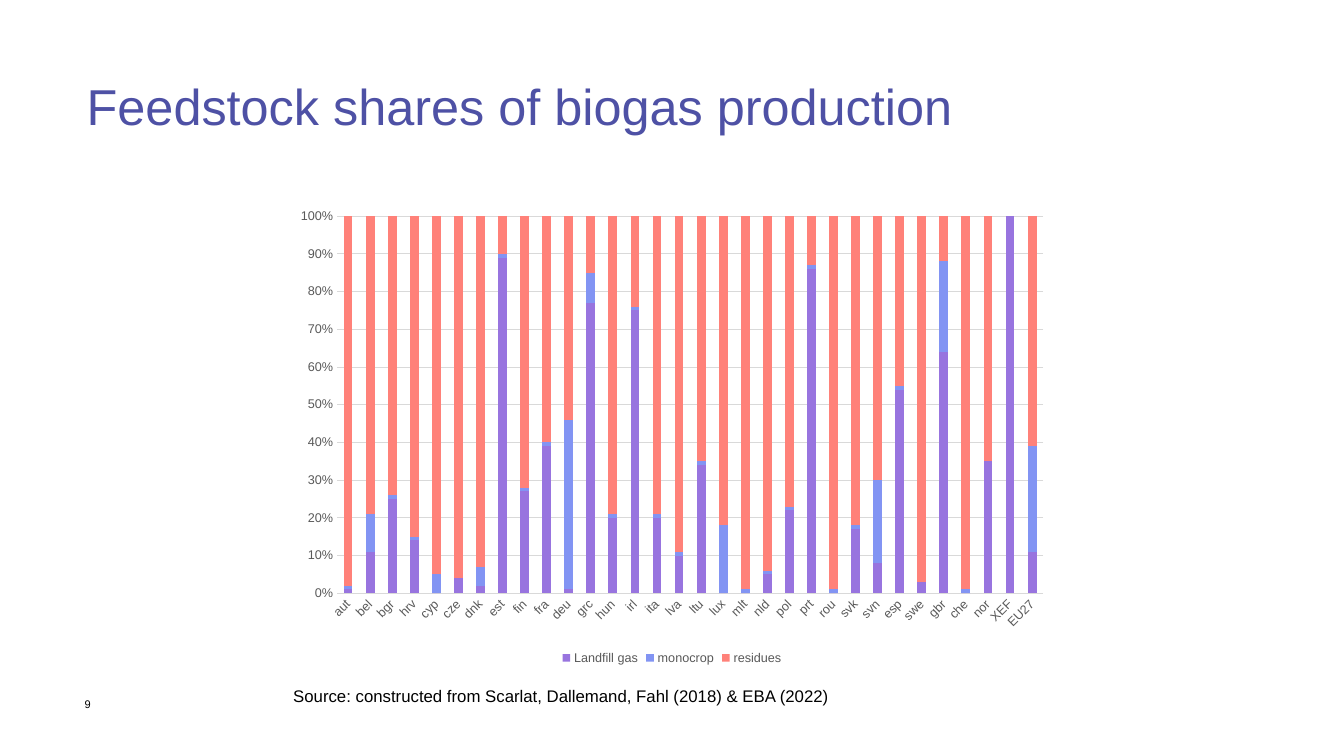
from dataclasses import dataclass

from pptx import Presentation
from pptx import util as u
from pptx.chart.data import CategoryChartData
from pptx.dml.color import RGBColor
from pptx.enum import chart as charts, text


@dataclass(frozen=True)
class Theme:
    """Colours and type sizes of the slide."""
    font: str = "Arial"
    title: str = "4E51A5"
    ink: str = "000000"
    label: str = "595959"
    rule: str = "D9D9D9"
    title_size: float = 36
    source_size: float = 12
    chart_size: float = 10
    label_size: float = 9
    number_size: float = 7.9
    rule_width: float = 0.75


THEME = Theme()
WIDTH, HEIGHT = 13.33, 7.5
TITLE_BOX = (0.86, 0.63, 11.6, 0.86)
CHART_BOX = (2.83, 1.98, 7.67, 4.66)
SOURCE_BOX = (2.81, 6.65, 5.56, 0.37)
NUMBER_BOX = (0.74, 6.87, 0.45, 0.26)

COUNTRIES = (
    "aut bel bgr hrv cyp cze dnk est fin fra deu grc hun irl ita lva "
    "ltu lux mlt nld pol prt rou svk svn esp swe gbr che nor XEF EU27"
).split()
FEEDSTOCKS = {
    "Landfill gas": ("9874DF", (
        1, 11, 25, 14, 0, 4, 2, 89, 27, 39, 1, 77, 20, 75, 20, 10,
        34, 0, 0, 5, 22, 86, 0, 17, 8, 54, 3, 64, 0, 35, 100, 11)),
    "monocrop": ("8294F3", (
        1, 10, 1, 1, 5, 0, 5, 1, 1, 1, 45, 8, 1, 1, 1, 1,
        1, 18, 1, 1, 1, 1, 1, 1, 22, 1, 0, 24, 1, 0, 0, 28)),
    "residues": ("FF8179", (
        98, 79, 74, 85, 95, 96, 93, 10, 72, 60, 54, 15, 79, 24, 79, 89,
        65, 82, 99, 94, 77, 13, 99, 82, 70, 45, 97, 12, 99, 65, 0, 61)),
}


def inches(box):
    """Turn a box in inches into lengths."""
    return [u.Inches(length) for length in box]


def assign(target, values):
    """Set each named attribute on the target."""
    for name, value in values.items():
        setattr(target, name, value)


def style_font(font, size, colour):
    """Apply the theme font in a size and colour."""
    assign(font, {"name": THEME.font, "size": u.Pt(size), "bold": False})
    font.color.rgb = RGBColor.from_string(colour)


def style_rule(line):
    """Draw a thin rule in the theme colour."""
    line.color.rgb = RGBColor.from_string(THEME.rule)
    line.width = u.Pt(THEME.rule_width)


def write(frame, words, size, colour, **paragraph_format):
    """Put one formatted paragraph into a text frame."""
    paragraph = frame.paragraphs[0]
    run = paragraph.add_run()
    run.text = words
    style_font(run.font, size, colour)
    assign(paragraph, paragraph_format)


def add_title(slide, box, words):
    """Place and format the title placeholder."""
    title = slide.shapes.title
    assign(title, dict(zip(("left", "top", "width", "height"), inches(box))))
    assign(title.text_frame, {
        "word_wrap": True,
        "auto_size": text.MSO_AUTO_SIZE.NONE,
        "vertical_anchor": text.MSO_ANCHOR.MIDDLE,
        "margin_left": 0,
        "margin_top": u.Inches(0.05),
        "margin_right": 0,
        "margin_bottom": 0,
    })
    write(title.text_frame, words, THEME.title_size, THEME.title,
          alignment=text.PP_ALIGN.LEFT, line_spacing=0.9)


def add_label(slide, box, words, size, wrap=True, **paragraph_format):
    """Add a line of small text in a box."""
    frame = slide.shapes.add_textbox(*inches(box)).text_frame
    frame.word_wrap = wrap
    write(frame, words, size, THEME.ink, **paragraph_format)


def style_axis(axis):
    """Remove the tick marks and format the labels of an axis."""
    assign(axis, {
        "major_tick_mark": charts.XL_TICK_MARK.NONE,
        "minor_tick_mark": charts.XL_TICK_MARK.NONE,
    })
    style_font(axis.tick_labels.font, THEME.label_size, THEME.label)


def add_feedstock_chart(slide, box):
    """Add the stacked share columns for every country."""
    data = CategoryChartData(number_format="0")
    data.categories = COUNTRIES
    for name, (_, shares) in FEEDSTOCKS.items():
        data.add_series(name, shares)
    chart = slide.shapes.add_chart(
        charts.XL_CHART_TYPE.COLUMN_STACKED_100, *inches(box), data).chart
    style_font(chart.font, THEME.chart_size, THEME.ink)
    assign(chart, {"has_title": False, "has_legend": True})
    assign(chart.legend, {
        "position": charts.XL_LEGEND_POSITION.BOTTOM,
        "include_in_layout": False,
    })
    style_font(chart.legend.font, THEME.label_size, THEME.label)

    plot = chart.plots[0]
    assign(plot, {"gap_width": 150, "overlap": 100, "vary_by_categories": False})
    for series, (colour, _) in zip(plot.series, FEEDSTOCKS.values()):
        series.format.fill.solid()
        series.format.fill.fore_color.rgb = RGBColor.from_string(colour)

    countries, shares = chart.category_axis, chart.value_axis
    for axis in (countries, shares):
        style_axis(axis)
    style_rule(countries.format.line)
    countries._element.txPr.bodyPr.set("rot", str(-45 * 60000))
    assign(shares, {
        "minimum_scale": 0,
        "maximum_scale": 1,
        "major_unit": 0.1,
        "has_major_gridlines": True,
    })
    assign(shares.tick_labels, {
        "number_format": "0%", "number_format_is_linked": False})
    shares.format.line.fill.background()
    style_rule(shares.major_gridlines.format.line)


def main():
    """Build the slide and save it."""
    presentation = Presentation()
    assign(presentation, {
        "slide_width": u.Inches(WIDTH), "slide_height": u.Inches(HEIGHT)})
    slide = presentation.slides.add_slide(
        presentation.slide_layouts.get_by_name("Title Only"))
    add_title(slide, TITLE_BOX, "Feedstock shares of biogas production")
    add_feedstock_chart(slide, CHART_BOX)
    add_label(slide, SOURCE_BOX,
              "Source: constructed from Scarlat, Dallemand, Fahl (2018) & EBA (2022)",
              THEME.source_size, wrap=False,
              alignment=text.PP_ALIGN.JUSTIFY, line_spacing=1.5)
    add_label(slide, NUMBER_BOX, "9", THEME.number_size)
    presentation.save("out.pptx")


if __name__ == "__main__":
    main()
